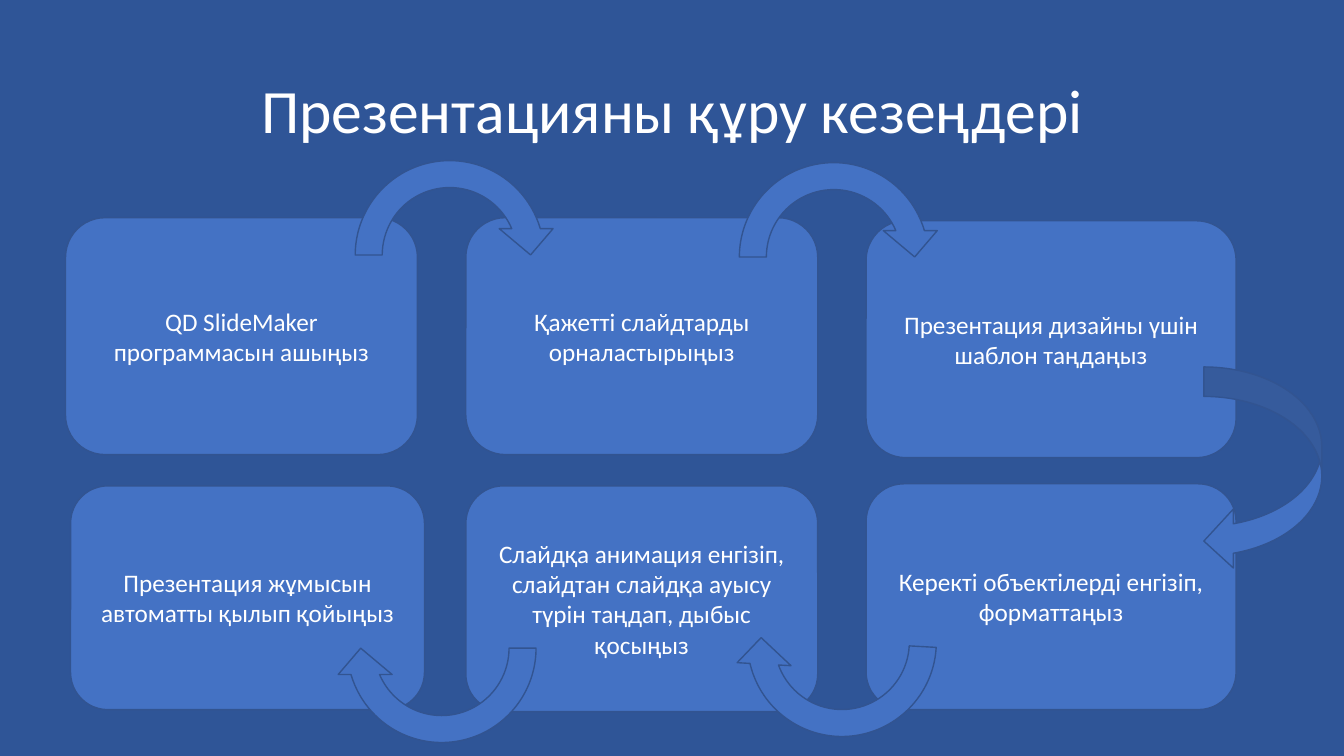
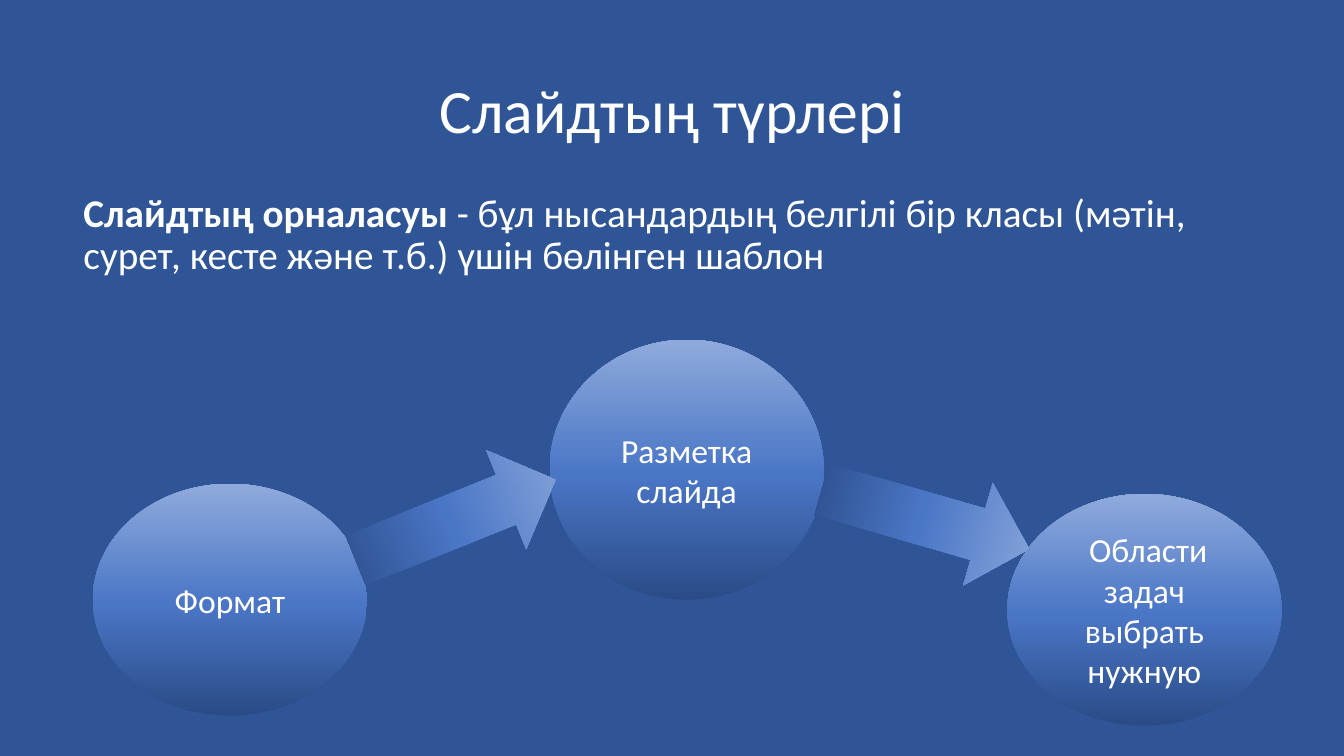
from copy import deepcopy

from pptx import Presentation
from pptx.dml.color import RGBColor
from pptx.enum.shapes import MSO_SHAPE as Shape
from pptx.enum.text import MSO_ANCHOR as Anchor, PP_ALIGN as Align
from pptx.oxml.ns import qn
from pptx.util import Inches, Pt

# Shared style
FONT = "Calibri"
BACKGROUND = RGBColor(0x2F, 0x55, 0x97)
WHITE = RGBColor(0xFF, 0xFF, 0xFF)
BLUE = RGBColor(0x44, 0x72, 0xC4)
OUTLINE = RGBColor(0x32, 0x54, 0x91)
GRADIENT = [
    (0, RGBColor(0x2A, 0x4B, 0x86)),
    (0.48, RGBColor(0x4A, 0x76, 0xC6)),
    (1, RGBColor(0x8F, 0xAA, 0xDC)),
]
TITLE_ONLY = 5

# Slide 1: left, top, width, height, text of each step
STEPS = [
    (0.65, 2.16, 3.49, 2.35, "QD SlideMaker программасын ашыңыз"),
    (4.62, 2.16, 3.49, 2.35, "Қажетті слайдтарды орналастырыңыз"),
    (8.59, 2.19, 3.67, 2.35, "Презентация дизайны үшін шаблон таңдаңыз"),
    (8.59, 4.8, 3.67, 2.24, "Керекті объектілерді енгізіп, форматтаңыз"),
    (4.62, 4.82, 3.49, 2.24,
     "Слайдқа анимация енгізіп, слайдтан слайдқа ауысу түрін таңдап, дыбыс қосыңыз"),
    (0.7, 4.82, 3.51, 2.22, "Презентация жұмысын автоматты қылып қойыңыз"),
]
# Left, top, rotation of each round arrow
ARC_SIZE = 2.14
ARCS = [(3.39, 1.46, 0), (7.2, 1.48, 0), (7.28, 5.3, 183.2), (3.31, 5.36, 180)]

# Slide 2: left, top, height, text of each kind of slide
CIRCLE_WIDTH = 2.72
CIRCLES = [
    (0.92, 4.8, 2.3, "Формат"),
    (5.45, 3.37, 2.58, "Разметка слайда"),
    (9.99, 4.9, 2.3, " Области задач выбрать нужную"),
]
# Left, top, rotation of each link between circles
LINKS = [(3.99, 4.09, 68), (8.65, 4.08, 106.1)]


def add_run(paragraph, text, size, bold=False):
    run = paragraph.add_run()
    run.text = text
    run.font.name = FONT
    run.font.size = Pt(size)
    run.font.bold = bold
    run.font.color.rgb = WHITE


def add_titled_slide(prs, text):
    slide = prs.slides.add_slide(prs.slide_layouts[TITLE_ONLY])
    title = slide.shapes.title
    title.left, title.top = Inches(0.92), Inches(0.4)
    title.width, title.height = Inches(11.5), Inches(1.45)
    title.text_frame.vertical_anchor = Anchor.MIDDLE
    paragraph = title.text_frame.paragraphs[0]
    paragraph.alignment = Align.CENTER
    paragraph.line_spacing = 0.9
    add_run(paragraph, text, 44)
    return slide


def add_figure(slide, kind, box, rotation=0, text="", size=18):
    """Preset shape without shadow, with optional centred text."""
    figure = slide.shapes.add_shape(kind, *map(Inches, box))
    figure.shadow.inherit = False
    figure.rotation = rotation
    if text:
        frame = figure.text_frame
        frame.word_wrap = True
        frame.vertical_anchor = Anchor.MIDDLE
        frame.paragraphs[0].alignment = Align.CENTER
        add_run(frame.paragraphs[0], text, size)
    return figure


def add_flat(slide, kind, box, **options):
    figure = add_figure(slide, kind, box, **options)
    figure.fill.solid()
    figure.fill.fore_color.rgb = BLUE
    figure.line.color.rgb = OUTLINE
    figure.line.width = Pt(1)


def add_shaded(slide, kind, box, **options):
    figure = add_figure(slide, kind, box, **options)
    figure.line.fill.background()
    figure.fill.gradient()
    figure.fill.gradient_angle = 90
    # The default gradient has two stops; a third is needed
    stop_list = figure._element.spPr.find(qn("a:gradFill")).find(qn("a:gsLst"))
    stop_list.append(deepcopy(stop_list[0]))
    for stop, (position, color) in zip(figure.fill.gradient_stops, GRADIENT):
        stop.position = position
        stop.color.rgb = color


def add_definition(slide, term, meaning):
    definition = slide.shapes.add_textbox(
        Inches(0.73), Inches(1.87), Inches(11.5), Inches(1.01))
    definition.text_frame.word_wrap = True
    paragraph = definition.text_frame.paragraphs[0]
    paragraph.line_spacing = 0.9
    paragraph.space_before = Pt(10)
    add_run(paragraph, term, 28, bold=True)
    add_run(paragraph, meaning, 28)


def build_steps(prs):
    slide = add_titled_slide(prs, "Презентацияны құру кезеңдері")
    for *box, text in STEPS:
        add_flat(slide, Shape.ROUNDED_RECTANGLE, box, text=text)
    for left, top, rotation in ARCS:
        add_flat(slide, Shape.CIRCULAR_ARROW, (left, top, ARC_SIZE, ARC_SIZE),
                 rotation=rotation)
    # Turn from the upper row to the lower one
    add_flat(slide, Shape.CURVED_LEFT_ARROW, (11.94, 3.64, 1.17, 2.02))


def build_kinds(prs):
    slide = add_titled_slide(prs, "Слайдтың түрлері")
    add_definition(
        slide, "Слайдтың орналасуы ",
        "- бұл нысандардың белгілі бір класы (мәтін, сурет, кесте және т.б.) "
        "үшін бөлінген шаблон")
    for left, top, height, text in CIRCLES:
        add_shaded(slide, Shape.OVAL, (left, top, CIRCLE_WIDTH, height),
                   text=text, size=24)
    for left, top, rotation in LINKS:
        add_shaded(slide, Shape.UP_ARROW, (left, top, 1.06, 2.14),
                   rotation=rotation)


def main():
    prs = Presentation()
    prs.slide_width, prs.slide_height = Inches(13.33), Inches(7.5)
    backdrop = prs.slide_master.background.fill
    backdrop.solid()
    backdrop.fore_color.rgb = BACKGROUND
    build_steps(prs)
    build_kinds(prs)
    prs.save("out.pptx")


if __name__ == "__main__":
    main()
